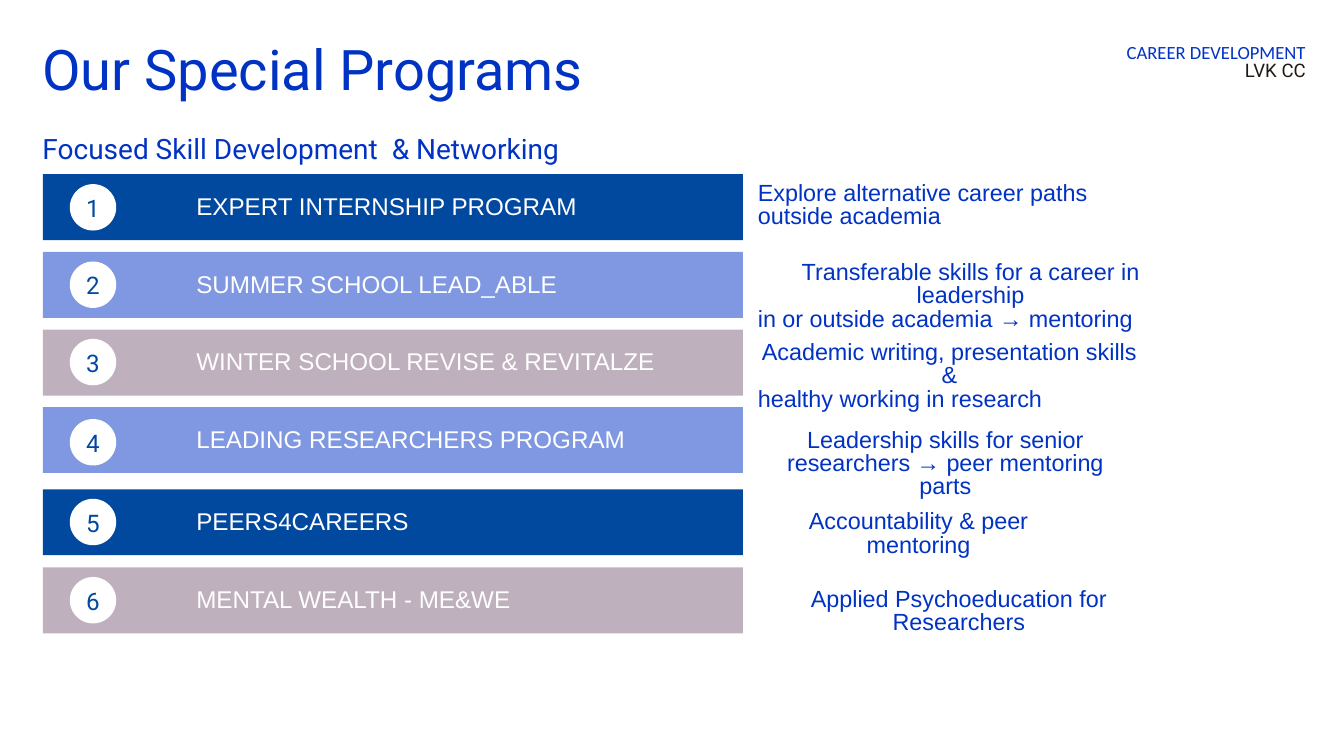
import pptx
import pptx.util
import pptx.dml.color
import pptx.enum.shapes
import pptx.enum.text

Cm = pptx.util.Cm
Pt = pptx.util.Pt
LEFT = pptx.enum.text.PP_ALIGN.LEFT
CENTER = pptx.enum.text.PP_ALIGN.CENTER
RIGHT = pptx.enum.text.PP_ALIGN.RIGHT
MIDDLE = pptx.enum.text.MSO_ANCHOR.MIDDLE
TOP = pptx.enum.text.MSO_ANCHOR.TOP

COLORS = {
    "blue": "0032C3",
    "navy": "00499F",
    "periwinkle": "8098E1",
    "mauve": "BFB0BD",
    "white": "FFFFFF",
    "ink": "211813",
}
STYLES = {
    "title": {"font": "Roboto", "size": 40, "line": 40, "color": "blue"},
    "subtitle": {"font": "Roboto", "size": 20, "line": 46, "color": "blue"},
    "section": {"font": "Calibri", "size": 13.3, "line": 13, "color": "blue"},
    "center": {"font": "Roboto", "size": 13.3, "line": 13, "color": "ink"},
    "program": {"font": "Arial", "size": 17.3, "line": 20.8, "color": "white"},
    "number": {"font": "Roboto", "size": 17.3, "line": 24.3, "color": "navy"},
    "description": {"font": "Arial", "size": 16.7, "line": 16.7, "color": "blue"},
}


def write(shape, lines, anchor=TOP, margin_left=0, margin_bottom=0):
    frame = shape.text_frame
    frame_format = {
        "word_wrap": True,
        "auto_size": pptx.enum.text.MSO_AUTO_SIZE.NONE,
        "vertical_anchor": anchor,
        "margin_left": Cm(margin_left),
        "margin_top": 0,
        "margin_right": 0,
        "margin_bottom": Cm(margin_bottom),
    }
    for name, value in frame_format.items():
        setattr(frame, name, value)
    for index, (text, style_name, alignment) in enumerate(lines):
        style = STYLES[style_name]
        paragraph = frame.add_paragraph() if index else frame.paragraphs[0]
        paragraph.text = text
        paragraph.alignment = alignment
        paragraph.line_spacing = Pt(style["line"])
        font_format = {"name": style["font"], "size": Pt(style["size"]), "bold": False}
        for name, value in font_format.items():
            setattr(paragraph.font, name, value)
        paragraph.font.color.rgb = pptx.dml.color.RGBColor.from_string(COLORS[style["color"]])


def add_filled(kind, left, top, width, height, color):
    shape = slide.shapes.add_shape(kind, Cm(left), Cm(top), Cm(width), Cm(height))
    shape.shadow.inherit = False
    shape.fill.solid()
    shape.fill.fore_color.rgb = pptx.dml.color.RGBColor.from_string(COLORS[color])
    shape.line.fill.background()
    return shape


presentation = pptx.Presentation()
presentation.slide_width = Cm(33.87)
presentation.slide_height = Cm(19.05)
slide = presentation.slides.add_slide(presentation.slide_layouts[5])

title = slide.shapes.title
title_place = {"left": Cm(1.07), "top": Cm(1.14), "width": Cm(21.06), "height": Cm(1.41)}
for name, value in title_place.items():
    setattr(title, name, value)
write(title, [("Our Special Programs", "title", LEFT)])

subtitle = slide.shapes.add_textbox(Cm(1.07), Cm(2.55), Cm(21.06), Cm(1.62))
write(subtitle, [("Focused Skill Development  & Networking", "subtitle", LEFT)])

header = slide.shapes.add_textbox(Cm(26.97), Cm(1.14), Cm(5.94), Cm(0.91))
write(header, [("CAREER DEVELOPMENT", "section", RIGHT), ("LVK CC", "center", RIGHT)])

programs = [
    ("EXPERT INTERNSHIP PROGRAM", "navy", 4.39, 4.64, 4.6, 9.14,
     [("Explore alternative career paths outside academia", LEFT)]),
    ("SUMMER SCHOOL LEAD_ABLE", "periwinkle", 6.35, 6.59, 6.6, 10.72,
     [("Transferable skills for a career in leadership", CENTER),
      ("in or outside academia → mentoring", LEFT)]),
    ("WINTER SCHOOL REVISE & REVITALZE", "mauve", 8.31, 8.54, 8.61, 9.65,
     [("Academic writing, presentation skills &", CENTER),
      ("healthy working in research", LEFT)]),
    ("LEADING RESEARCHERS PROGRAM", "periwinkle", 10.26, 10.56, 10.82, 9.45,
     [("Leadership skills for senior researchers → peer mentoring parts", CENTER)]),
    ("PEERS4CAREERS", "navy", 12.33, 12.57, 12.88, 8.1,
     [("Accountability & peer mentoring", CENTER)]),
    ("MENTAL WEALTH - ME&WE", "mauve", 14.3, 14.54, 14.83, 10.13,
     [("Applied Psychoeducation for Researchers", CENTER)]),
]
shape_types = pptx.enum.shapes.MSO_SHAPE
for number, program in enumerate(programs, 1):
    name, color, bar_top, circle_top, text_top, text_width, description = program
    bar = add_filled(shape_types.RECTANGLE, 1.08, bar_top, 17.64, 1.66, color)
    write(bar, [(name, "program", LEFT)], MIDDLE, margin_left=3.87, margin_bottom=0.08)
    circle = add_filled(shape_types.OVAL, 1.76, circle_top, 1.17, 1.17, "white")
    write(circle, [(str(number), "number", CENTER)], MIDDLE, margin_bottom=0.1)
    box = slide.shapes.add_textbox(
        Cm(19.1), Cm(text_top), Cm(text_width), Cm(1.83 if len(description) > 1 else 1.22))
    write(box, [(text, "description", alignment) for text, alignment in description])

presentation.save("out.pptx")
